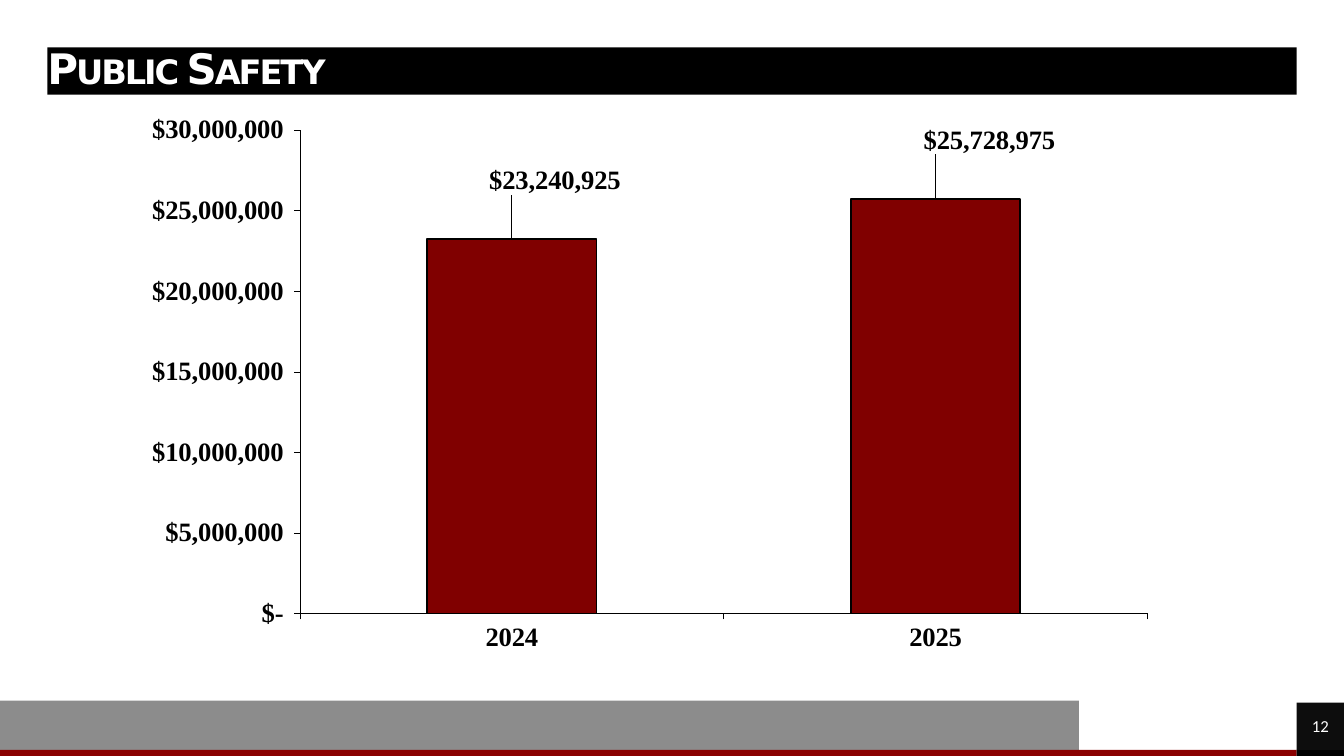
import pptx
import pptx.chart.data
import pptx.dml.color
import pptx.enum.chart
import pptx.enum.shapes
import pptx.enum.text
import pptx.oxml
import pptx.oxml.ns
import pptx.util

RGBColor = pptx.dml.color.RGBColor
BLACK = RGBColor(0x00, 0x00, 0x00)
WHITE = RGBColor(0xFF, 0xFF, 0xFF)
CHARCOAL = RGBColor(0x0D, 0x0D, 0x0D)
GRAY = RGBColor(0x8C, 0x8C, 0x8C)
RED = RGBColor(0x8A, 0x00, 0x00)
MAROON = RGBColor(0x80, 0x00, 0x00)

DOLLARS = '_($* #,##0_);_($* (#,##0);_($* "-"_);_(@_)'
MARGIN = 3.53
RIGHT_EDGE = 100 - MARGIN
BAND_END = 80.27
BAND_TOP = 92.67
STRIPE_TOP = 99.2


class BudgetSlide:
    """Style and drawing methods for one slide, with lengths in percent of its size."""

    def __init__(self, presentation):
        self.width = presentation.slide_width
        self.height = presentation.slide_height
        self.slide = presentation.slides.add_slide(presentation.slide_layouts[5])

    def box(self, left, top, width, height):
        return [round(share * side / 100) for share, side in
                zip((left, top, width, height), (self.width, self.height) * 2)]

    def style_font(self, font, name, size, color, bold=False):
        font.name = name
        font.size = pptx.util.Pt(size)
        font.bold = bold
        font.color.rgb = color

    def style_chart_font(self, font):
        self.style_font(font, "Times New Roman", 19, BLACK, True)

    def fill(self, shape, color):
        shape.fill.solid()
        shape.fill.fore_color.rgb = color

    def fit_frame(self, frame):
        frame.margin_left = frame.margin_right = 0
        frame.margin_top = frame.margin_bottom = 0
        frame.vertical_anchor = pptx.enum.text.MSO_ANCHOR.MIDDLE
        frame.auto_size = pptx.enum.text.MSO_AUTO_SIZE.NONE
        frame.word_wrap = True

    def block(self, place, color):
        block = self.slide.shapes.add_shape(
            pptx.enum.shapes.MSO_SHAPE.RECTANGLE, *self.box(*place))
        block.shadow.inherit = False
        self.fill(block, color)
        block.line.fill.background()
        return block

    def title(self, text, place):
        heading = self.slide.shapes.title
        heading.left, heading.top, heading.width, heading.height = self.box(*place)
        self.fill(heading, BLACK)
        heading.text_frame.text = text
        self.fit_frame(heading.text_frame)
        paragraph = heading.text_frame.paragraphs[0]
        paragraph.alignment = pptx.enum.text.PP_ALIGN.LEFT
        paragraph.line_spacing = 0.9
        run = paragraph.runs[0]
        self.style_font(run.font, "DejaVu Sans", 30, WHITE, True)
        properties = run.font._element if hasattr(run.font, "_element") else run._r.get_or_add_rPr()
        properties.set("cap", "small")
        properties.set("spc", "-150")

    def page_number(self, text, place):
        badge = self.block(place, CHARCOAL)
        badge.text_frame.text = text
        self.fit_frame(badge.text_frame)
        paragraph = badge.text_frame.paragraphs[0]
        paragraph.alignment = pptx.enum.text.PP_ALIGN.CENTER
        self.style_font(paragraph.runs[0].font, "Calibri", 12, WHITE)

    def manual_layout(self, **settings):
        entries = "".join(f'<c:{key} val="{value}"/>' for key, value in settings.items())
        return pptx.oxml.parse_xml(
            f'<c:layout {pptx.oxml.ns.nsdecls("c")}>'
            f'<c:manualLayout>{entries}</c:manualLayout></c:layout>')

    def style_axis(self, axis):
        axis.has_major_gridlines = False
        axis.major_tick_mark = pptx.enum.chart.XL_TICK_MARK.OUTSIDE
        axis.minor_tick_mark = pptx.enum.chart.XL_TICK_MARK.NONE
        axis.format.line.color.rgb = BLACK
        axis.format.line.width = pptx.util.Pt(0.3)
        self.style_chart_font(axis.tick_labels.font)

    def column_chart(self, spending, label_shifts, place):
        data = pptx.chart.data.CategoryChartData(number_format=DOLLARS)
        data.categories = list(spending)
        data.add_series("Series 1", list(spending.values()))
        chart = self.slide.shapes.add_chart(
            pptx.enum.chart.XL_CHART_TYPE.COLUMN_CLUSTERED, *self.box(*place), data).chart
        chart.has_legend = False
        chart.has_title = False
        self.style_font(chart.font, "Times New Roman", 21.5, BLACK, True)

        self.style_axis(chart.category_axis)
        chart.category_axis.tick_label_position = pptx.enum.chart.XL_TICK_LABEL_POSITION.LOW
        amounts = chart.value_axis
        self.style_axis(amounts)
        amounts.minimum_scale, amounts.maximum_scale = 0, 30_000_000
        amounts.major_unit = 5_000_000
        amounts.tick_labels.number_format = DOLLARS
        amounts.tick_labels.number_format_is_linked = False

        plot = chart.plots[0]
        plot.gap_width = 150
        plot.vary_by_categories = False
        columns = plot.series[0]
        self.fill(columns.format, MAROON)
        columns.format.line.color.rgb = BLACK
        columns.format.line.width = pptx.util.Pt(1.2)
        labels = columns.data_labels
        labels.show_value = True
        labels.number_format = DOLLARS
        labels.number_format_is_linked = False
        labels.position = pptx.enum.chart.XL_LABEL_POSITION.OUTSIDE_END
        self.style_chart_font(labels.font)

        for index, (across, down) in enumerate(label_shifts):
            label = columns.points[index].data_label
            label.position = pptx.enum.chart.XL_LABEL_POSITION.OUTSIDE_END
            self.style_chart_font(label.font)
            entry = chart.element.xpath(f'.//c:dLbl[c:idx/@val="{index}"]')[0]
            entry.insert(1, self.manual_layout(x=across, y=down))

        area = chart.element.xpath(".//c:plotArea")[0]
        for layout in area.xpath("./c:layout"):
            area.remove(layout)
        area.insert(0, self.manual_layout(
            layoutTarget="inner", xMode="edge", yMode="edge",
            x=0.2, y=0.022, w=0.787, h=0.847))


def main():
    presentation = pptx.Presentation()
    presentation.slide_width = pptx.util.Inches(13.33)
    presentation.slide_height = pptx.util.Inches(7.5)
    page = BudgetSlide(presentation)

    stripe_height = 100 - STRIPE_TOP
    page.block((0, BAND_TOP, BAND_END, STRIPE_TOP - BAND_TOP), GRAY)
    for start, end, color in ((0, BAND_END, RED), (BAND_END, RIGHT_EDGE, RED),
                              (RIGHT_EDGE, 100, BLACK)):
        page.block((start, STRIPE_TOP, end - start, stripe_height), color)

    page.title("Public Safety", (MARGIN, 6.27, RIGHT_EDGE - MARGIN, 6.27))
    page.page_number("12", (RIGHT_EDGE, 92.93, MARGIN, STRIPE_TOP - 92.93))
    page.column_chart({"2024": 23240925, "2025": 25728975},
                      ((0.04, -0.07), (0.05, -0.07)), (6.3, 15.33, 80.12, 75.73))
    presentation.save("out.pptx")


if __name__ == "__main__":
    main()
